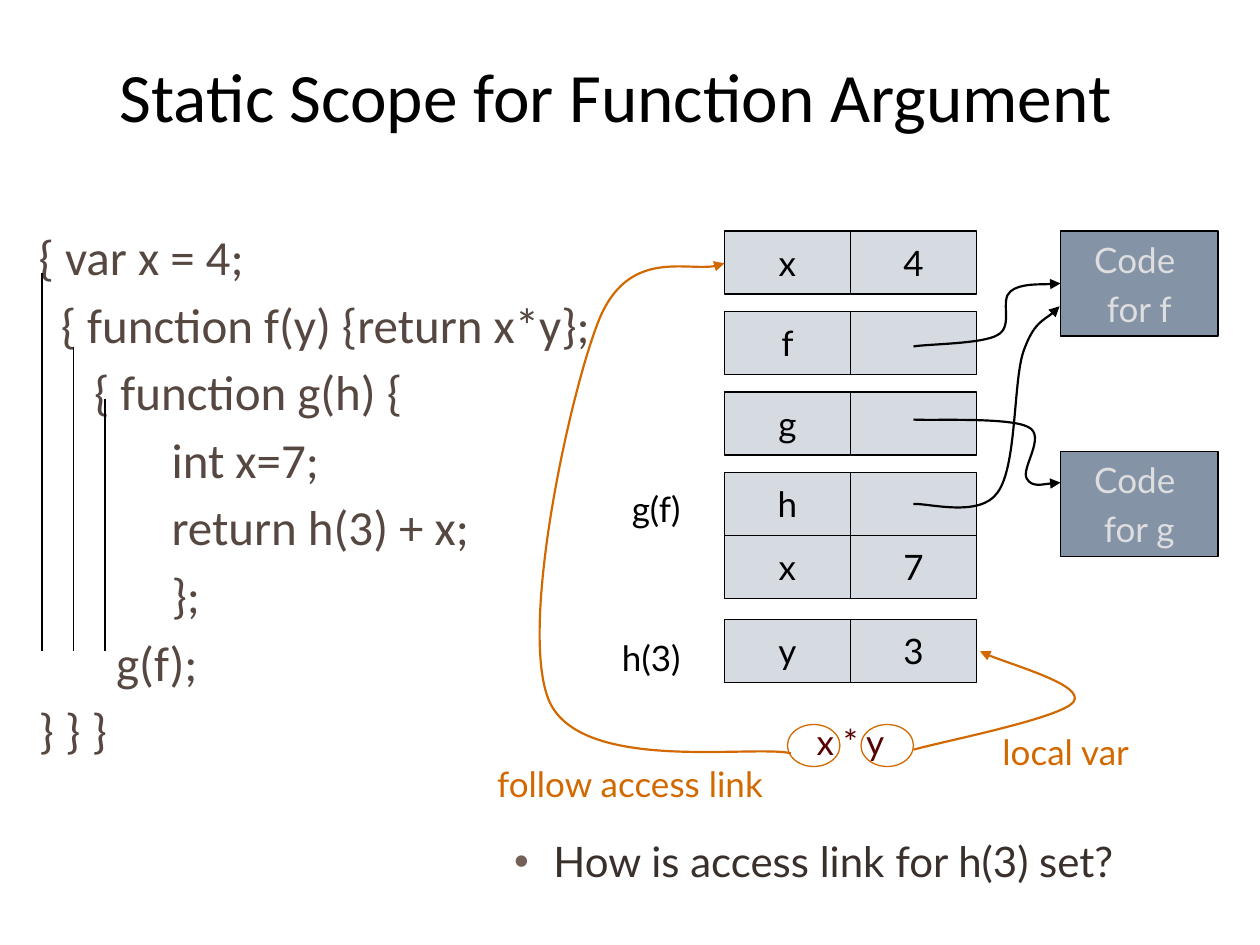
from dataclasses import dataclass
from typing import Any, NamedTuple

from lxml.etree import SubElement
from pptx import Presentation
from pptx.dml.color import RGBColor
from pptx.enum.shapes import MSO_CONNECTOR, MSO_SHAPE
from pptx.enum.text import MSO_ANCHOR, PP_ALIGN
from pptx.oxml.ns import qn
from pptx.util import Pt


@dataclass(frozen=True)
class Theme:
    ink: str = "000000"
    code: str = "564841"
    cell: str = "D6DBE1"
    closure: str = "8494A6"
    closure_text: str = "DEDEE0"
    access: str = "D26900"
    expression: str = "560000"
    question: str = "39302B"
    bullet: str = "726056"
    heading_font: str = "Calibri"
    label_font: str = "Lato"
    title_size: float = 39.6
    code_size: float = 28
    question_size: float = 24
    label_size: float = 20
    thin: float = 0.75
    thick: float = 1.25


THEME = Theme()


class Box(NamedTuple):
    left: float
    top: float
    width: float
    height: float

    def lengths(self) -> list[Pt]:
        return [Pt(value) for value in self]


class TextStyle(NamedTuple):
    color: str = THEME.ink
    size: float = THEME.label_size
    font: str = THEME.label_font
    align: PP_ALIGN = PP_ALIGN.CENTER
    gap: float = 0


class Record(NamedTuple):
    top: float
    variable: str
    value: str


class Label(NamedTuple):
    box: Box
    text: str
    style: TextStyle


class Curve(NamedTuple):
    color: str
    points: list[tuple[float, float]]  # start, then three points per Bézier piece


CELL_LEFT, CELL_WIDTH, CELL_HEIGHT = 414, 72, 36
RECORDS = [
    Record(132, "x", "4"), Record(178, "f", ""), Record(224, "g", ""),
    Record(270, "h", ""), Record(306, "x", "7"), Record(354, "y", "3"),
]

CODE_MARGIN, SPACE_WIDTH = 9, 6.33
CODE_LINES = [  # depth in spaces, statement
    (0, "{ var x = 4;"), (2, "{ function f(y) {return x*y};"),
    (5, "{ function g(h) {"), (12, "int x=7;"), (12, "return h(3) + x;"),
    (12, "};"), (7, "g(f);"), (0, "} } }"),
]
SCOPE_BOTTOM = 372
SCOPE_STARTS = [(24, 156), (42, 198), (60, 228)]

ACCESS_STYLE = TextStyle(THEME.access)
CALL_STYLE = TextStyle(align=PP_ALIGN.RIGHT)
LABELS = [
    Label(Box(294, 275, 102, 31), "g(f)", CALL_STYLE),
    Label(Box(294, 360, 102, 31), "h(3)", CALL_STYLE),
    Label(Box(414, 408, 144, 31), "x * y", TextStyle(THEME.expression)),
    Label(Box(276, 432, 168, 31), "follow access link", ACCESS_STYLE),
    Label(Box(546, 414, 126, 31), "local var", ACCESS_STYLE),
]

CURVES = [
    # f and g to their code, h to the code for f
    Curve(THEME.ink, [(522, 198), (530, 196.6), (561.6, 196.6), (570, 191.5),
                      (579.5, 186.5), (571, 171.5), (577.5, 166.5),
                      (583, 162), (600, 162.7), (606, 162)]),
    Curve(THEME.ink, [(522, 239.8), (532.8, 240.5), (576.7, 238.3), (587.5, 244),
                      (598.3, 249), (583, 268), (586.8, 273.6),
                      (589.7, 278.6), (602, 275.8), (606, 275.8)]),
    Curve(THEME.ink, [(522, 288), (530, 287.3), (560, 296), (570, 281.5),
                      (581, 267), (579, 219.6), (584.6, 201.6),
                      (590.4, 184.3), (601, 180.7), (605.5, 175)]),
    # x by access link, y as local variable
    Curve(THEME.access, [(452, 430.5), (430, 425.5), (332.6, 442), (314, 401),
                         (296, 360), (325.5, 225.4), (342, 183.6),
                         (358.6, 141.8), (399.6, 157.7), (414, 150.5)]),
    Curve(THEME.access, [(522, 428.4), (537, 424), (607, 410.4), (613.5, 401),
                         (620, 391.7), (571, 378), (560, 372.2)]),
]


def apply(target: Any, values: dict[str, Any]) -> None:
    for name, value in values.items():
        setattr(target, name, value)


def write(frame: Any, lines: list[str], style: TextStyle) -> None:
    for number, line in enumerate(lines):
        paragraph = frame.add_paragraph() if number else frame.paragraphs[0]
        apply(paragraph, {"alignment": style.align, "space_before": Pt(style.gap)})
        run = paragraph.add_run()
        run.text = line
        apply(run.font, {"name": style.font, "size": Pt(style.size)})
        run.font.color.rgb = RGBColor.from_string(style.color)


def add_text(slide: Any, box: Box, lines: list[str], style: TextStyle,
             anchor: MSO_ANCHOR = MSO_ANCHOR.TOP) -> Any:
    frame = slide.shapes.add_textbox(*box.lengths()).text_frame
    apply(frame, {"word_wrap": True, "vertical_anchor": anchor})
    write(frame, lines, style)
    return frame


def set_line(outlined: Any, color: str, width: float) -> None:
    outlined.line.color.rgb = RGBColor.from_string(color)
    outlined.line.width = Pt(width)


def add_figure(slide: Any, kind: MSO_SHAPE, box: Box, fill: str | None, line: str) -> Any:
    figure = slide.shapes.add_shape(kind, *box.lengths())
    figure.shadow.inherit = False
    if fill:
        figure.fill.solid()
        figure.fill.fore_color.rgb = RGBColor.from_string(fill)
    else:
        figure.fill.background()
    set_line(figure, line, THEME.thin)
    return figure


def add_block(slide: Any, box: Box, fill: str, lines: list[str], style: TextStyle) -> None:
    frame = add_figure(slide, MSO_SHAPE.RECTANGLE, box, fill, THEME.ink).text_frame
    apply(frame, {"word_wrap": False, "vertical_anchor": MSO_ANCHOR.MIDDLE})
    write(frame, lines, style)


def add_curve(slide: Any, curve: Curve) -> None:
    start, *rest = [(Pt(x), Pt(y)) for x, y in curve.points]
    builder = slide.shapes.build_freeform(*start)
    builder.add_line_segments(rest, close=False)
    arrow = builder.convert_to_shape()
    arrow.shadow.inherit = False
    arrow.fill.background()
    set_line(arrow, curve.color, THEME.thick)
    # Join every three straight segments into one Bézier piece
    outline = next(arrow._element.iter(qn("a:path")))
    segments = outline.findall(qn("a:lnTo"))
    for first in range(0, len(segments), 3):
        piece = SubElement(outline, qn("a:cubicBezTo"))
        for segment in segments[first:first + 3]:
            piece.append(segment[0])
            outline.remove(segment)
    SubElement(arrow._element.spPr.find(qn("a:ln")), qn("a:tailEnd"), type="triangle")


def add_scope_line(slide: Any, x: float, top: float) -> None:
    scope = slide.shapes.add_connector(
        MSO_CONNECTOR.STRAIGHT, Pt(x), Pt(top), Pt(x), Pt(SCOPE_BOTTOM))
    set_line(scope, THEME.ink, THEME.thin)
    SubElement(scope._element.spPr, qn("a:effectLst"))


def indent(paragraph: Any, margin: float, hanging: float = 0) -> Any:
    properties = paragraph._p.get_or_add_pPr()
    properties.set("marL", str(Pt(margin)))
    properties.set("indent", str(Pt(-hanging)))
    return properties


def main() -> None:
    deck = Presentation()
    apply(deck, {"slide_width": Pt(720), "slide_height": Pt(540)})
    slide = deck.slides.add_slide(deck.slide_layouts[6])

    # Title and program
    add_text(slide, Box(32, 18, 640, 72), ["Static Scope for Function Argument"],
             TextStyle(size=THEME.title_size, font=THEME.heading_font), MSO_ANCHOR.MIDDLE)
    program = add_text(
        slide, Box(6, 126, 354, 306), [statement for _, statement in CODE_LINES],
        TextStyle(THEME.code, THEME.code_size, THEME.heading_font, PP_ALIGN.LEFT, gap=5))
    for paragraph, (depth, _) in zip(program.paragraphs, CODE_LINES):
        indent(paragraph, CODE_MARGIN + depth * SPACE_WIDTH)

    # Activation records
    for record in RECORDS:
        for column, entry in enumerate((record.variable, record.value)):
            cell = Box(CELL_LEFT + column * CELL_WIDTH, record.top, CELL_WIDTH, CELL_HEIGHT)
            add_block(slide, cell, THEME.cell, [entry] if entry else [], TextStyle())

    # Function code
    for function, top in (("f", 132), ("g", 258)):
        add_block(slide, Box(606, top, 90, 60), THEME.closure,
                  ["Code ", f"for {function}"], TextStyle(THEME.closure_text, gap=4))

    # Labels, operands and links
    for label in LABELS:
        add_text(slide, label.box, [label.text], label.style)
    for left in (450, 492):
        add_figure(slide, MSO_SHAPE.OVAL, Box(left, 414, 30, 24), None, THEME.access)
    for curve in CURVES:
        add_curve(slide, curve)

    # Question
    question = add_text(slide, Box(234, 474, 426, 48), ["How is access link for h(3) set?"],
                        TextStyle(THEME.question, THEME.question_size))
    properties = indent(question.paragraphs[0], 58.5, 22.5)
    SubElement(SubElement(properties, qn("a:buClr")), qn("a:srgbClr"), val=THEME.bullet)
    SubElement(properties, qn("a:buFont"), typeface="Arial")
    SubElement(properties, qn("a:buChar"), char="•")

    # Scope lines
    for x, top in SCOPE_STARTS:
        add_scope_line(slide, x, top)

    deck.save("out.pptx")


if __name__ == "__main__":
    main()
